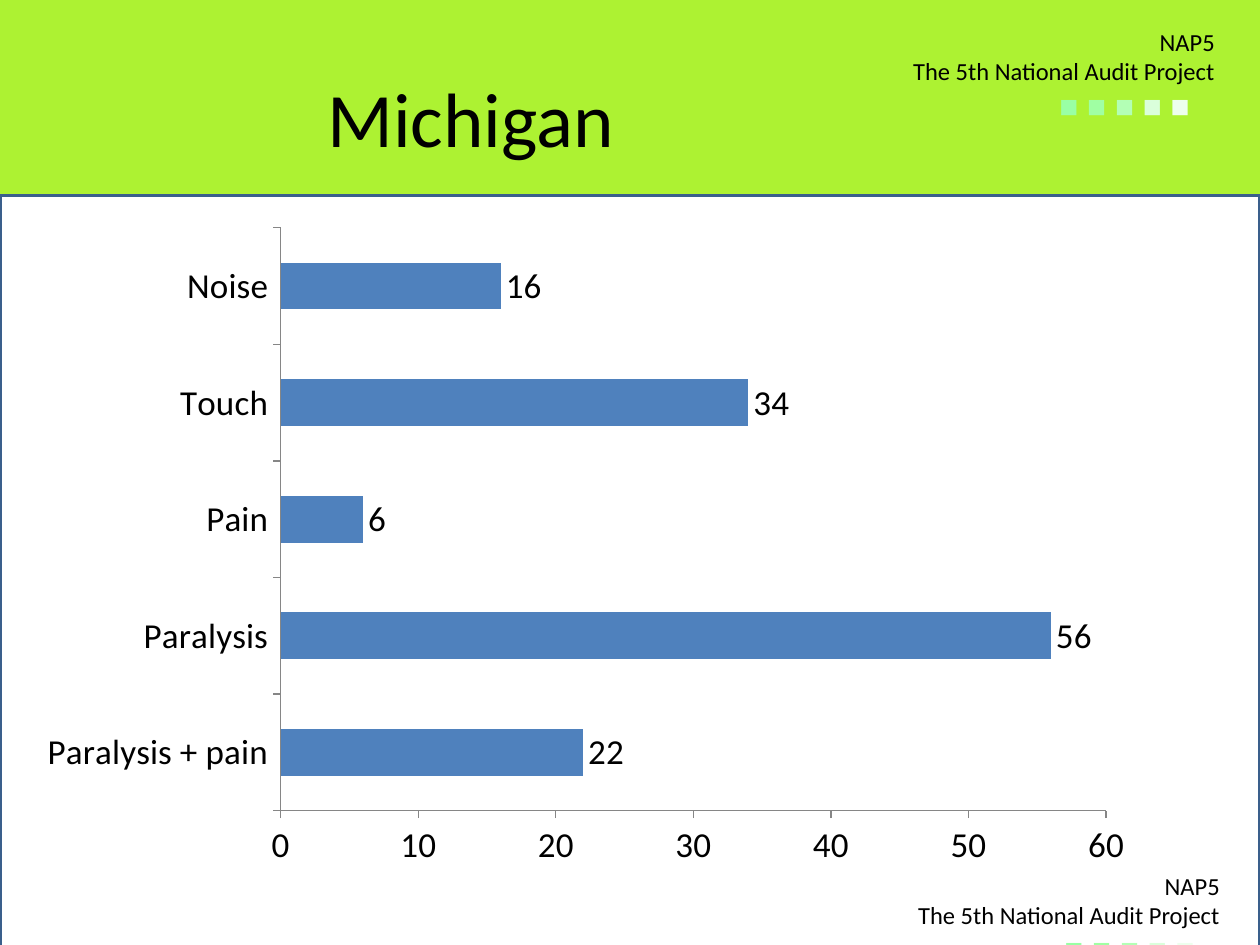
from dataclasses import dataclass

from pptx import Presentation
from pptx.chart.data import CategoryChartData
from pptx.dml.color import RGBColor
from pptx.enum.chart import XL_CHART_TYPE as ChartType
from pptx.enum.chart import XL_LABEL_POSITION as LabelPosition
from pptx.enum.chart import XL_TICK_MARK as TickMark
from pptx.enum.shapes import MSO_SHAPE as ShapeType
from pptx.enum.text import MSO_ANCHOR as Anchor
from pptx.enum.text import PP_ALIGN as Align
from pptx.util import Inches, Pt

WIDTH, HEIGHT = 10, 7.5
BODY_FONT, SQUARE_FONT = "Calibri", "Arial"
BLACK, WHITE, LIME = "000000", "FFFFFF", "ADF232"
BAR_BLUE, BORDER_BLUE, AXIS_GREY = "4F81BD", "3A5F8C", "868686"
SQUARE_COLORS = ["99FFA4", "A0FFA3", "B3FFB5", "DAFFDB", "EDFFED"]
PROJECT_LINES = ["NAP5", "The 5th National Audit Project"]
RESPONSES = {"Paralysis + pain": 22, "Paralysis": 56, "Pain": 6, "Touch": 34, "Noise": 16}


@dataclass(frozen=True)
class Box:
    """Left, top, width and height as shares of the slide's size."""
    left: float
    top: float
    width: float
    height: float

    def lengths(self):
        return (Inches(self.left * WIDTH), Inches(self.top * HEIGHT),
                Inches(self.width * WIDTH), Inches(self.height * HEIGHT))


PANEL = Box(0, 0.207, 1, 0.85)
TITLE = Box(0.05, 0.04, 0.9, 0.167)
CHART = Box(0.02, 0.227, 0.89, 0.704)
PROJECT_MARKS = [Box(0.657, 0.027, 0.317, 0.105), Box(0.661, 0.92, 0.317, 0.105)]


def rgb(color: str) -> RGBColor:
    return RGBColor.from_string(color)


def style_font(font, size: float, color: str = BLACK, name: str = BODY_FONT) -> None:
    font.size, font.name = Pt(size), name
    font.color.rgb = rgb(color)


def indent(paragraph, inches: float) -> None:
    paragraph._p.get_or_add_pPr().set("marL", str(Inches(inches)))


def add_text_frame(slide, box: Box):
    text_frame = slide.shapes.add_textbox(*box.lengths()).text_frame
    text_frame.word_wrap = True
    text_frame.vertical_anchor = Anchor.MIDDLE
    return text_frame


def add_panel(slide) -> None:
    panel = slide.shapes.add_shape(ShapeType.RECTANGLE, *PANEL.lengths())
    panel.shadow.inherit = False
    panel.fill.solid()
    panel.fill.fore_color.rgb = rgb(WHITE)
    panel.line.color.rgb = rgb(BORDER_BLUE)
    panel.line.width = Pt(2)


def add_project_mark(slide, box: Box) -> None:
    """Project name over a row of fading squares."""
    text_frame = add_text_frame(slide, box)
    text_frame.text = "\n".join(PROJECT_LINES)
    for paragraph in text_frame.paragraphs:
        paragraph.alignment = Align.RIGHT
        style_font(paragraph.runs[0].font, 14)

    squares = text_frame.add_paragraph()
    squares.alignment = Align.LEFT
    indent(squares, 1.74)
    for position, color in enumerate(SQUARE_COLORS, start=1):
        run = squares.add_run()
        run.text = "■" if position == len(SQUARE_COLORS) else "■ "
        style_font(run.font, 18, color, SQUARE_FONT)


def add_title(slide) -> None:
    text_frame = add_text_frame(slide, TITLE)
    text_frame.text = "Michigan"
    paragraph = text_frame.paragraphs[0]
    indent(paragraph, 2)
    style_font(paragraph.runs[0].font, 44)


def add_response_chart(slide) -> None:
    data = CategoryChartData()
    data.categories = list(RESPONSES)
    data.add_series("Series 1", list(RESPONSES.values()))
    chart = slide.shapes.add_chart(ChartType.BAR_CLUSTERED, *CHART.lengths(), data).chart
    chart.has_legend = chart.has_title = False
    style_font(chart.font, 10)

    for axis in (chart.category_axis, chart.value_axis):
        axis.has_major_gridlines = False
        axis.major_tick_mark = TickMark.OUTSIDE
        axis.minor_tick_mark = TickMark.NONE
        axis.format.line.color.rgb = rgb(AXIS_GREY)
        style_font(axis.tick_labels.font, 20)
    chart.value_axis.minimum_scale = 0
    chart.value_axis.maximum_scale = 60
    chart.value_axis.major_unit = 10

    plot = chart.plots[0]
    plot.gap_width = 150
    plot.vary_by_categories = False
    series = plot.series[0]
    series.format.fill.solid()
    series.format.fill.fore_color.rgb = rgb(BAR_BLUE)
    labels = series.data_labels
    labels.show_value = True
    labels.position = LabelPosition.OUTSIDE_END
    style_font(labels.font, 20)


def main() -> None:
    presentation = Presentation()
    presentation.slide_width, presentation.slide_height = Inches(WIDTH), Inches(HEIGHT)
    slide = presentation.slides.add_slide(presentation.slide_layouts[6])
    slide.background.fill.solid()
    slide.background.fill.fore_color.rgb = rgb(LIME)
    add_panel(slide)
    for box in PROJECT_MARKS:
        add_project_mark(slide, box)
    add_title(slide)
    add_response_chart(slide)
    presentation.save("out.pptx")


if __name__ == "__main__":
    main()
